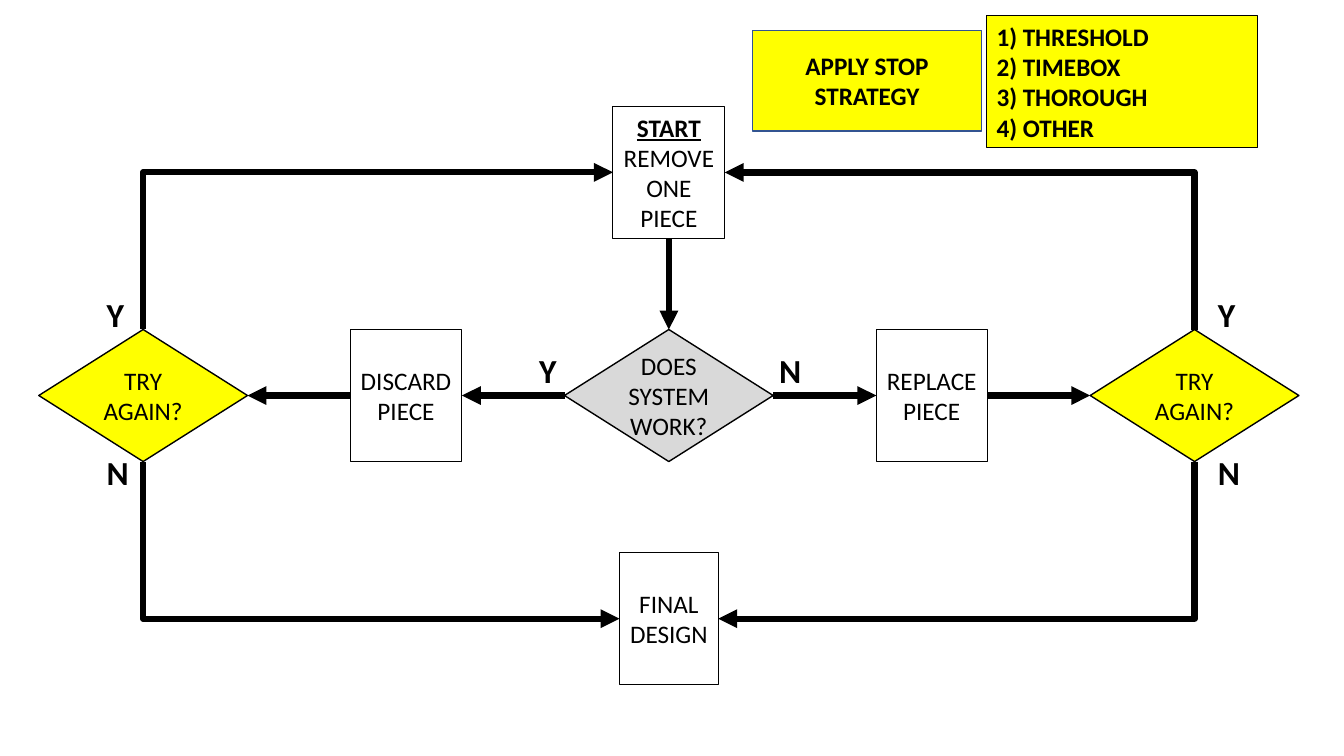
from pptx import Presentation
from pptx.dml.color import RGBColor
from pptx.enum.shapes import MSO_CONNECTOR, MSO_SHAPE
from pptx.enum.text import MSO_ANCHOR, PP_ALIGN
from pptx.oxml.ns import qn
from pptx.util import Inches, Pt
from lxml.etree import SubElement

HEX = {"ink": "000000", "white": "FFFFFF", "gray": "D9D9D9",
       "gold": "FFFF00", "blue": "325491"}
COLS = [1.42 + 2.607 * i for i in range(5)]
ROWS = [1.71 + 2.214 * i for i in range(3)]
HIGH = 1.31
TOP, LEFT, LOW, RIGHT = range(4)

deck = Presentation()
deck.slide_width, deck.slide_height = Inches(13.33), Inches(7.5)
slide = deck.slides.add_slide(deck.slide_layouts[6])
shapes = slide.shapes


def write(shape, text, size=18, bold=False, align=PP_ALIGN.CENTER,
          wrap=False):
    frame = shape.text_frame
    frame.text = text
    frame.word_wrap = wrap
    for para in frame.paragraphs:
        para.alignment = align
        font = para.font
        font.name, font.size, font.bold = "Calibri", Pt(size), bold
        font.color.rgb = RGBColor.from_string(HEX["ink"])


def draw(kind, x, y, wide, high, fill, edge="ink", weight=0.75):
    """Add a filled, outlined shape centred on x, y."""
    shape = shapes.add_shape(kind, Inches(x - wide / 2), Inches(y - high / 2),
                             Inches(wide), Inches(high))
    shape.shadow.inherit = False
    shape.fill.solid()
    shape.fill.fore_color.rgb = RGBColor.from_string(HEX[fill])
    shape.line.color.rgb = RGBColor.from_string(HEX[edge])
    shape.line.width = Pt(weight)
    shape.text_frame.vertical_anchor = MSO_ANCHOR.MIDDLE
    return shape


# Steps and decisions: name, column, row, width, fill, text
nodes = {}
for name, col, row, wide, fill, text in [
    ("start", 2, 0, 1.11, "white", "START\nREMOVE\nONE\nPIECE"),
    ("discard", 1, 1, 1.11, "white", "DISCARD\nPIECE"),
    ("replace", 3, 1, 1.1, "white", "REPLACE\nPIECE"),
    ("final", 2, 2, 0.98, "white", "FINAL\nDESIGN"),
    ("works", 2, 1, 2.07, "gray", "DOES\nSYSTEM\nWORK?"),
    ("again left", 0, 1, 2.07, "gold", "TRY\nAGAIN?"),
    ("again right", 4, 1, 2.07, "gold", "TRY\nAGAIN?"),
]:
    step = fill == "white"
    kind = MSO_SHAPE.RECTANGLE if step else MSO_SHAPE.FLOWCHART_DECISION
    node = draw(kind, COLS[col], ROWS[row], wide, HIGH, fill,
                weight=0.75 if step else 1)
    write(node, text)
    nodes[name] = node
head = nodes["start"].text_frame.paragraphs[0].font
head.bold = head.underline = True

# Arrows: from, side, to, side
for first, out, last, into in [
    ("start", LOW, "works", TOP),
    ("works", LEFT, "discard", RIGHT),
    ("works", RIGHT, "replace", LEFT),
    ("replace", RIGHT, "again right", LEFT),
    ("discard", LEFT, "again left", RIGHT),
    ("again left", LOW, "final", LEFT),
    ("again left", TOP, "start", LEFT),
    ("again right", TOP, "start", RIGHT),
    ("again right", LOW, "final", RIGHT),
]:
    bent = first.startswith("again")
    kind = MSO_CONNECTOR.ELBOW if bent else MSO_CONNECTOR.STRAIGHT
    arrow = shapes.add_connector(kind, 0, 0, 0, 0)
    arrow.begin_connect(nodes[first], out)
    arrow.end_connect(nodes[last], into)
    arrow.line.width = Pt(4.5)
    arrow.line.color.rgb = RGBColor.from_string(HEX["ink"])
    props = arrow._element.spPr
    SubElement(props.find(qn("a:ln")), qn("a:tailEnd"), type="triangle")
    SubElement(props, qn("a:effectLst"))
    if bent:
        # A quarter turn makes the single-bend elbow leave vertically
        props.find(qn("a:prstGeom")).set("prst", "bentConnector2")
        wide, high = arrow.width, arrow.height
        arrow.left += (wide - high) // 2
        arrow.top += (high - wide) // 2
        arrow.width, arrow.height = high, wide
        frame = props.find(qn("a:xfrm"))
        frame.set("rot", "5400000")
        frame.set("flipH", str(int(out == TOP)))
        frame.set("flipV", str(int(into == LEFT)))

# Answers beside the decisions
for text, x, y in [("Y", 5.25, 3.42), ("Y", 0.96, 2.87), ("Y", 11.98, 2.87),
                   ("N", 7.63, 3.42), ("N", 11.98, 4.43), ("N", 0.96, 4.43)]:
    label = shapes.add_textbox(Inches(x), Inches(y), Inches(0.4), Inches(0.5))
    write(label, text, 24, True, PP_ALIGN.LEFT)

# Stop strategy and its options
plan = draw(MSO_SHAPE.RECTANGLE, 8.6, 0.8, 2.27, 1, "gold", "blue", 1)
write(plan, "APPLY STOP\nSTRATEGY", bold=True, wrap=True)
options = draw(MSO_SHAPE.RECTANGLE, 11.13, 0.81, 2.69, HIGH, "gold")
write(options, "1) THRESHOLD\n2) TIMEBOX\n3) THOROUGH\n4) OTHER",
      bold=True, align=PP_ALIGN.LEFT, wrap=True)

deck.save("out.pptx")
